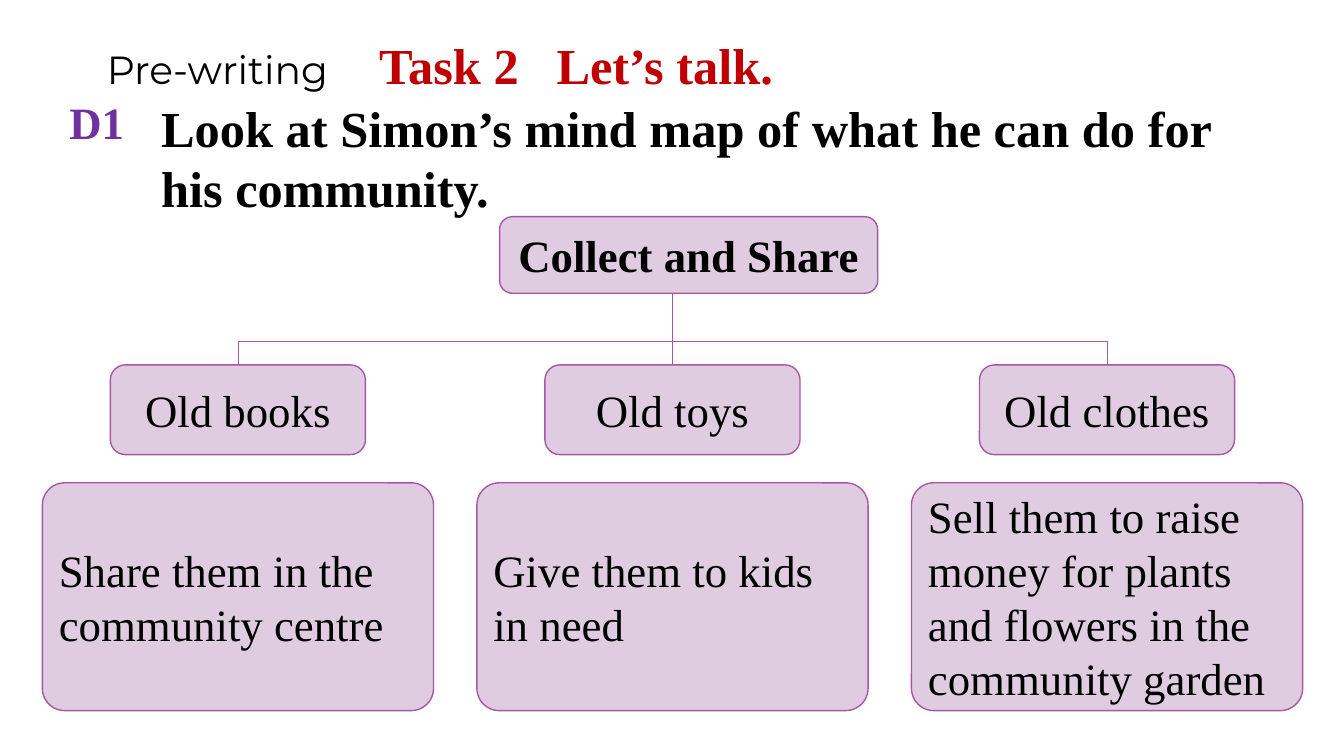
import pptx
import pptx.util
import pptx.dml.color
import pptx.enum.shapes
import pptx.enum.text
import pptx.oxml
import pptx.oxml.ns
from lxml import etree

Inches = pptx.util.Inches
ALIGN = pptx.enum.text.PP_ALIGN
ANCHOR = pptx.enum.text.MSO_ANCHOR
CONNECTOR = pptx.enum.shapes.MSO_CONNECTOR
SERIF = "Times New Roman"
COLORS = {"black": "000000", "red": "C00000", "purple": "7030A0",
          "node": "DFCCE1", "border": "A857A6"}


def rgb(name):
    return pptx.dml.color.RGBColor.from_string(COLORS[name])


def write(text, shape, size=32, color="black", bold=False, font=SERIF,
          align=ALIGN.LEFT, anchor=ANCHOR.TOP):
    """Append a formatted run to the first paragraph of a shape."""
    frame = shape.text_frame
    frame.word_wrap = True
    frame.auto_size = pptx.enum.text.MSO_AUTO_SIZE.NONE
    frame.vertical_anchor = anchor
    paragraph = frame.paragraphs[0]
    paragraph.alignment = align
    run = paragraph.add_run()
    run.text = text
    run.font.name = font
    run.font.size = pptx.util.Pt(size)
    run.font.bold = bold
    run.font.color.rgb = rgb(color)


prs = pptx.Presentation()
prs.slide_width, prs.slide_height = Inches(13.33), Inches(7.5)
slide = prs.slides.add_slide(prs.slide_layouts[5])
shapes = slide.shapes

# Heading, with tab stops between its three parts
heading = shapes.title
heading.left, heading.top = Inches(0.96), Inches(0.29)
heading.width, heading.height = Inches(8.27), Inches(0.71)
heading_props = heading.text_frame.paragraphs[0]._p.get_or_add_pPr()
tab_list = etree.SubElement(heading_props, pptx.oxml.ns.qn("a:tabLst"))
for stop in (2.7, 4.46):
    etree.SubElement(tab_list, pptx.oxml.ns.qn("a:tab"),
                     pos=str(Inches(stop)), algn="l")
write("Pre-writing\t", heading, size=28, font="Montserrat")
write("Task 2\tLet’s talk.", heading, size=36, color="red", bold=True)

# Exercise number and instruction
number = shapes.add_textbox(Inches(0.59), Inches(0.89), Inches(1.04), Inches(0.64))
write("D1", number, color="purple", bold=True)
instruction = shapes.add_textbox(Inches(1.5), Inches(0.91), Inches(11.3), Inches(1.18))
write("Look at Simon’s mind map of what he can do for his community.",
      instruction, size=36, bold=True)

# Mind map: connectors first, so that they run behind the nodes
CENTER, PITCH = 6.67, 4.31
TRUNK_TOP, BRANCH_END = 2.92, 3.85
branches = [
    ("Old books", "Share them in the community centre"),
    ("Old toys", "Give them to kids in need"),
    ("Old clothes",
     "Sell them to raise money for plants and flowers in the community garden"),
]
centers = [CENTER + (i - 1) * PITCH for i in range(len(branches))]
drop = BRANCH_END - TRUNK_TOP
mid_y = (TRUNK_TOP + BRANCH_END) / 2
for x in centers:
    if x == CENTER:
        link = shapes.add_connector(CONNECTOR.STRAIGHT, Inches(x), Inches(3.03),
                                    Inches(x), Inches(3.67))
    else:
        # An elbow leaves sideways, so it is laid out flat and turned by 90°
        mid_x, half_span = (CENTER + x) / 2, (CENTER - x) / 2
        link = shapes.add_connector(
            CONNECTOR.ELBOW, Inches(mid_x - drop / 2), Inches(mid_y - half_span),
            Inches(mid_x + drop / 2), Inches(mid_y + half_span))
        link._element.spPr.find(pptx.oxml.ns.qn("a:xfrm")).set("rot", "5400000")
    link.line.color.rgb = rgb("border")
    link.line.width = pptx.util.Pt(0.5)
    etree.SubElement(link._element.spPr, pptx.oxml.ns.qn("a:effectLst"))

# Nodes: text, centre x, top, width, height, corner, alignment, bold
nodes = [("Collect and Share", 6.83, 2.15, 3.75, 0.76, 0.167, ALIGN.CENTER, True)]
for x, (item, action) in zip(centers, branches):
    nodes.append((item, x, 3.62, 2.53, 0.89, 0.167, ALIGN.CENTER, False))
    nodes.append((action, x, 4.79, 3.88, 2.26, 0.098, ALIGN.LEFT, False))
for text, x, top, width, height, corner, align, bold in nodes:
    node = shapes.add_shape(pptx.enum.shapes.MSO_SHAPE.ROUNDED_RECTANGLE,
                            Inches(x - width / 2), Inches(top),
                            Inches(width), Inches(height))
    node.adjustments[0] = corner
    node.shadow.inherit = False
    node.fill.solid()
    node.fill.fore_color.rgb = rgb("node")
    node.line.color.rgb = rgb("border")
    node.line.width = pptx.util.Pt(1)
    write(text, node, bold=bold, align=align, anchor=ANCHOR.MIDDLE)

prs.save("out.pptx")
